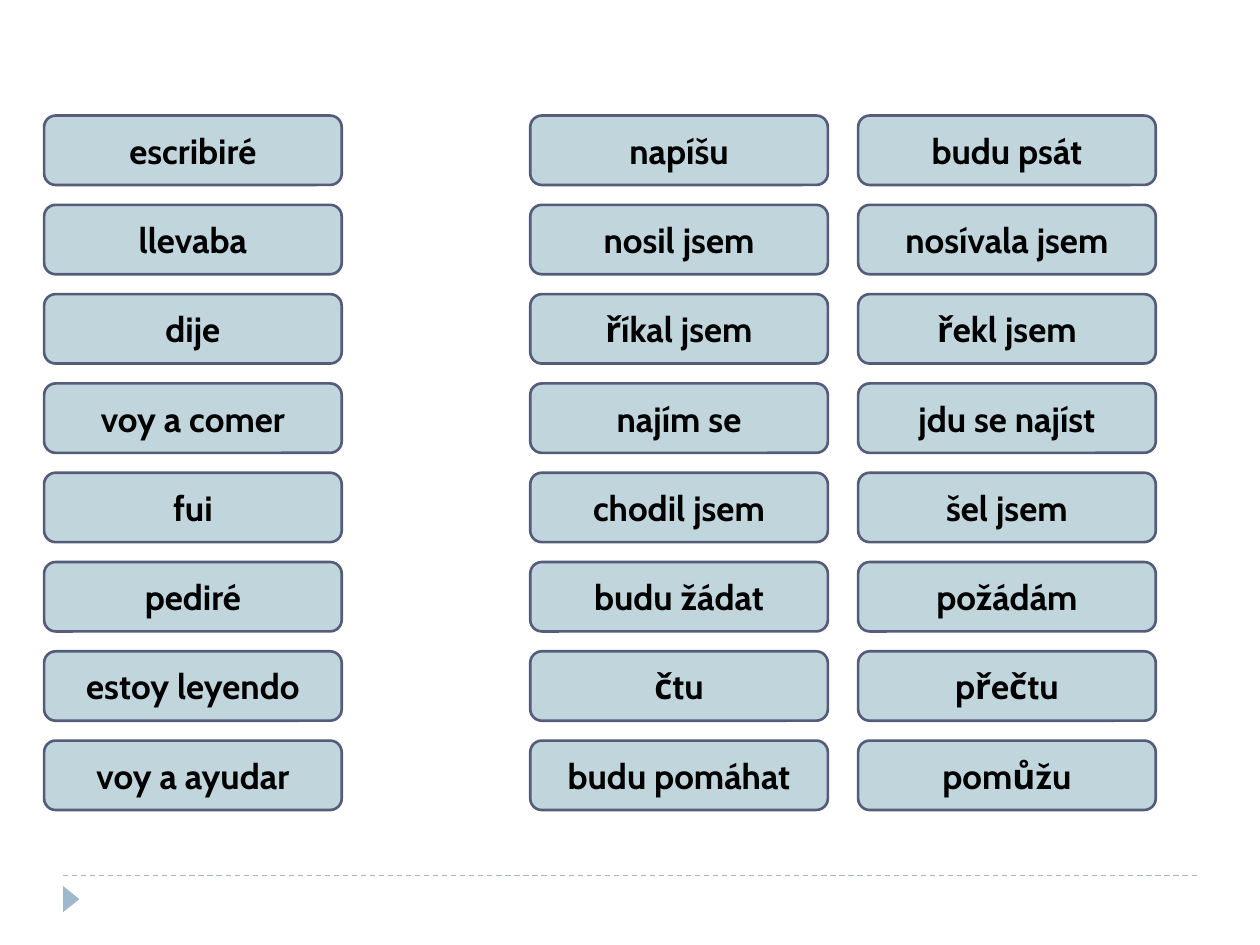
import pptx
import pptx.dml.color
import pptx.enum.dml
import pptx.enum.shapes
import pptx.enum.text
import pptx.oxml.ns
import pptx.util
from lxml import etree
from pptx.util import Cm

CARD_FILL = pptx.dml.color.RGBColor(0xC0, 0xD6, 0xDC)
CARD_EDGE = pptx.dml.color.RGBColor(0x54, 0x5C, 0x79)
FOOTER_BLUE = pptx.dml.color.RGBColor(0x9F, 0xB8, 0xCD)
BLACK = pptx.dml.color.RGBColor(0, 0, 0)

CARD_WIDTH, CARD_HEIGHT, CARD_PITCH = Cm(6), Cm(1.4), Cm(1.8)
CARDS_TOP = Cm(2.33)
CARD_FONT = {"name": "Cabin", "size": pptx.util.Pt(20), "bold": True}

VERB_COLUMNS = [
    (Cm(0.89), ["escribiré", "llevaba", "dije", "voy a comer",
                "fui", "pediré", "estoy leyendo", "voy a ayudar"]),
    (Cm(10.69), ["napíšu", "nosil jsem", "říkal jsem", "najím se",
                 "chodil jsem", "budu žádat", "čtu", "budu pomáhat"]),
    (Cm(17.3), ["budu psát", "nosívala jsem", "řekl jsem", "jdu se najíst",
                "šel jsem", "požádám", "přečtu", "pomůžu"]),
]


def add_footer(slide, left, top, width):
    rule = slide.shapes.add_connector(
        pptx.enum.shapes.MSO_CONNECTOR.STRAIGHT, left, top, left + width, top)
    rule.line.color.rgb = FOOTER_BLUE
    rule.line.width = pptx.util.Pt(0.75)
    rule.line.dash_style = pptx.enum.dml.MSO_LINE.DASH
    etree.SubElement(rule.element.spPr, pptx.oxml.ns.qn("a:effectLst"))

    marker = slide.shapes.add_shape(
        pptx.enum.shapes.MSO_SHAPE.ISOSCELES_TRIANGLE,
        left - Cm(0.1), top + Cm(0.31), Cm(0.53), Cm(0.33))
    marker.rotation = 90
    marker.shadow.inherit = False
    marker.fill.solid()
    marker.fill.fore_color.rgb = FOOTER_BLUE
    marker.line.fill.background()


def add_card(slide, verb, left, top, width, height):
    card = slide.shapes.add_shape(
        pptx.enum.shapes.MSO_SHAPE.ROUNDED_RECTANGLE, left, top, width, height)
    card.shadow.inherit = False
    card.fill.solid()
    card.fill.fore_color.rgb = CARD_FILL
    card.line.color.rgb = CARD_EDGE
    card.line.width = pptx.util.Pt(1.5)

    card.text_frame.vertical_anchor = pptx.enum.text.MSO_ANCHOR.MIDDLE
    paragraph = card.text_frame.paragraphs[0]
    paragraph.alignment = pptx.enum.text.PP_ALIGN.CENTER
    label = paragraph.add_run()
    label.text = verb
    for attribute, value in CARD_FONT.items():
        setattr(label.font, attribute, value)
    label.font.color.rgb = BLACK


def add_verb_column(slide, verbs, left, top):
    for row, verb in enumerate(verbs):
        add_card(slide, verb, left, top + row * CARD_PITCH, CARD_WIDTH, CARD_HEIGHT)


def main():
    deck = pptx.Presentation()
    deck.slide_width, deck.slide_height = Cm(25.4), Cm(19.05)
    slide = deck.slides.add_slide(deck.slide_layouts[6])
    add_footer(slide, Cm(1.27), Cm(17.65), Cm(22.86))
    for left, verbs in VERB_COLUMNS:
        add_verb_column(slide, verbs, left, CARDS_TOP)
    deck.save("out.pptx")


if __name__ == "__main__":
    main()
